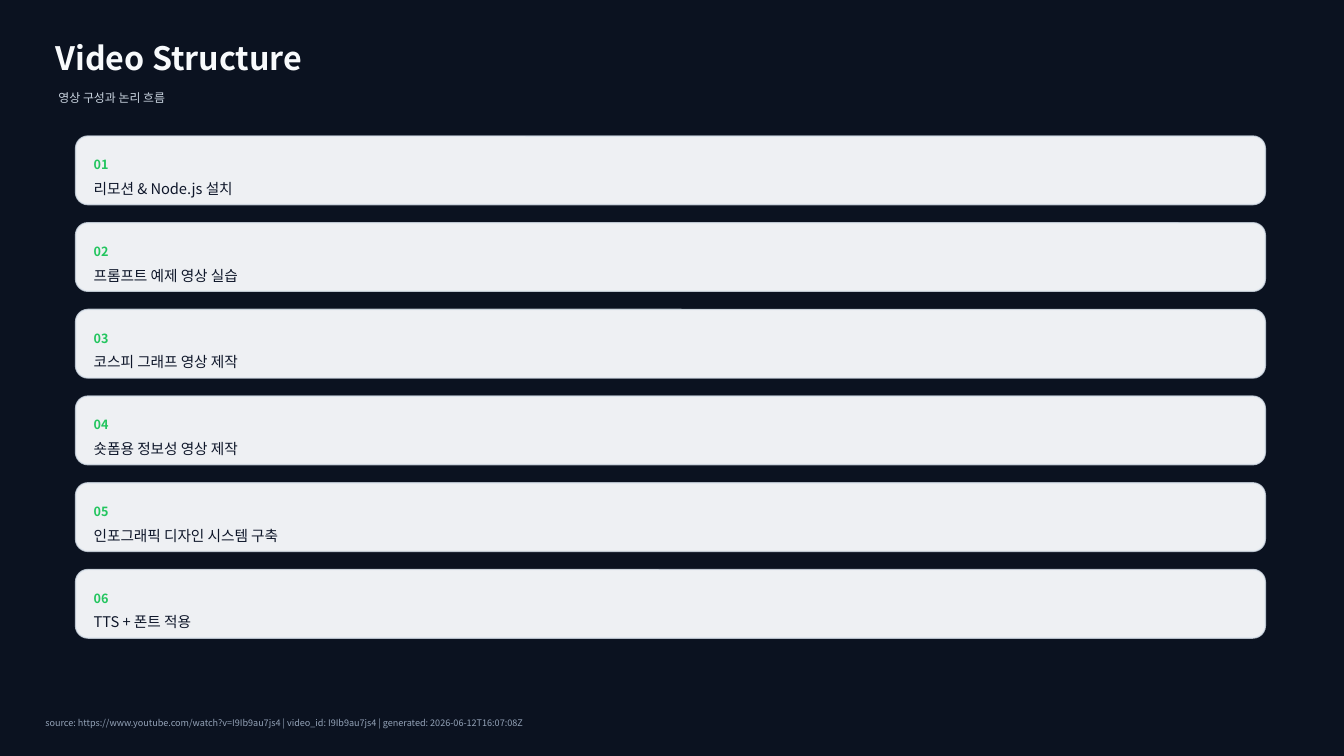
from lxml import etree
from pptx import Presentation
from pptx.dml.color import RGBColor
from pptx.enum import shapes, text
from pptx.oxml.ns import qn
from pptx.util import Inches, Pt

FONT = "Noto Sans CJK KR"
NAVY = RGBColor(0x0B, 0x12, 0x20)
WHITE = RGBColor(0xF8, 0xFA, 0xFC)
SILVER = RGBColor(0xCB, 0xD5, 0xE1)
EDGE = RGBColor(0xD7, 0xE0, 0xEA)
GREEN = RGBColor(0x22, 0xC5, 0x5E)
INK = RGBColor(0x0F, 0x17, 0x2A)
GREY = RGBColor(0x94, 0xA3, 0xB8)

STEPS = [
    "리모션 & Node.js 설치",
    "프롬프트 예제 영상 실습",
    "코스피 그래프 영상 제작",
    "숏폼용 정보성 영상 제작",
    "인포그래픽 디자인 시스템 구축",
    "TTS + 폰트 적용",
]
SOURCE = ("source: https://www.youtube.com/watch?v=I9Ib9au7js4"
          " | video_id: I9Ib9au7js4 | generated: 2026-06-12T16:07:08Z")
TOP, PITCH = 1.35, 0.86


def fill_text(shape, words, size, color, bold=False):
    frame = shape.text_frame
    frame.text = words
    frame.word_wrap = True
    frame.auto_size = text.MSO_AUTO_SIZE.NONE
    frame.vertical_anchor = text.MSO_ANCHOR.MIDDLE
    frame.margin_left = frame.margin_right = 0
    frame.margin_top = frame.margin_bottom = 0
    line = frame.paragraphs[0]
    line.alignment = text.PP_ALIGN.LEFT
    for run in line.runs:
        font = run.font
        font.size, font.bold, font.name = Pt(size), bold, FONT
        font.color.rgb = color
        # Hangul takes the East Asian typeface
        etree.SubElement(run._r.get_or_add_rPr(), qn("a:ea"), typeface=FONT)


def add_label(slide, box, words, size, color, bold=False):
    label = slide.shapes.add_textbox(*map(Inches, box))
    fill_text(label, words, size, color, bold)


def set_alpha(part, percent):
    tone = part.find(qn("a:solidFill"))[0]
    etree.SubElement(tone, qn("a:alpha"), val=str(percent * 1000))


def add_card(slide, top):
    card = slide.shapes.add_shape(
        shapes.MSO_SHAPE.ROUNDED_RECTANGLE,
        Inches(0.75), Inches(top), Inches(11.8), Inches(0.68))
    card.adjustments[0] = 0.18
    card.shadow.inherit = False
    card.fill.solid()
    card.fill.fore_color.rgb = WHITE
    card.line.color.rgb = EDGE
    card.line.width = Pt(1)
    props = card._element.spPr
    set_alpha(props, 96)
    set_alpha(props.find(qn("a:ln")), 80)


def add_step(slide, index, words):
    top = TOP + index * PITCH
    add_card(slide, top)
    add_label(slide, (0.93, top + 0.16, 11.44, 0.25),
              f"{index + 1:02d}", 9, GREEN, True)
    add_label(slide, (0.93, top + 0.5, 11.44, 0.04), words, 10.5, INK)


def main():
    deck = Presentation()
    deck.slide_width, deck.slide_height = Inches(13.33), Inches(7.5)
    slide = deck.slides.add_slide(deck.slide_layouts[5])
    slide.background.fill.solid()
    slide.background.fill.fore_color.rgb = NAVY

    # Heading
    title = slide.shapes.title
    title.left, title.top = Inches(0.55), Inches(0.35)
    title.width, title.height = Inches(12), Inches(0.45)
    fill_text(title, "Video Structure", 23, WHITE, True)
    add_label(slide, (0.58, 0.83, 11.5, 0.28), "영상 구성과 논리 흐름", 8.5, SILVER)

    # Numbered steps
    for index, words in enumerate(STEPS):
        add_step(slide, index, words)

    # Source line
    add_label(slide, (0.45, 7.05, 12.4, 0.25), SOURCE, 6.5, GREY)
    deck.save("out.pptx")


if __name__ == "__main__":
    main()
